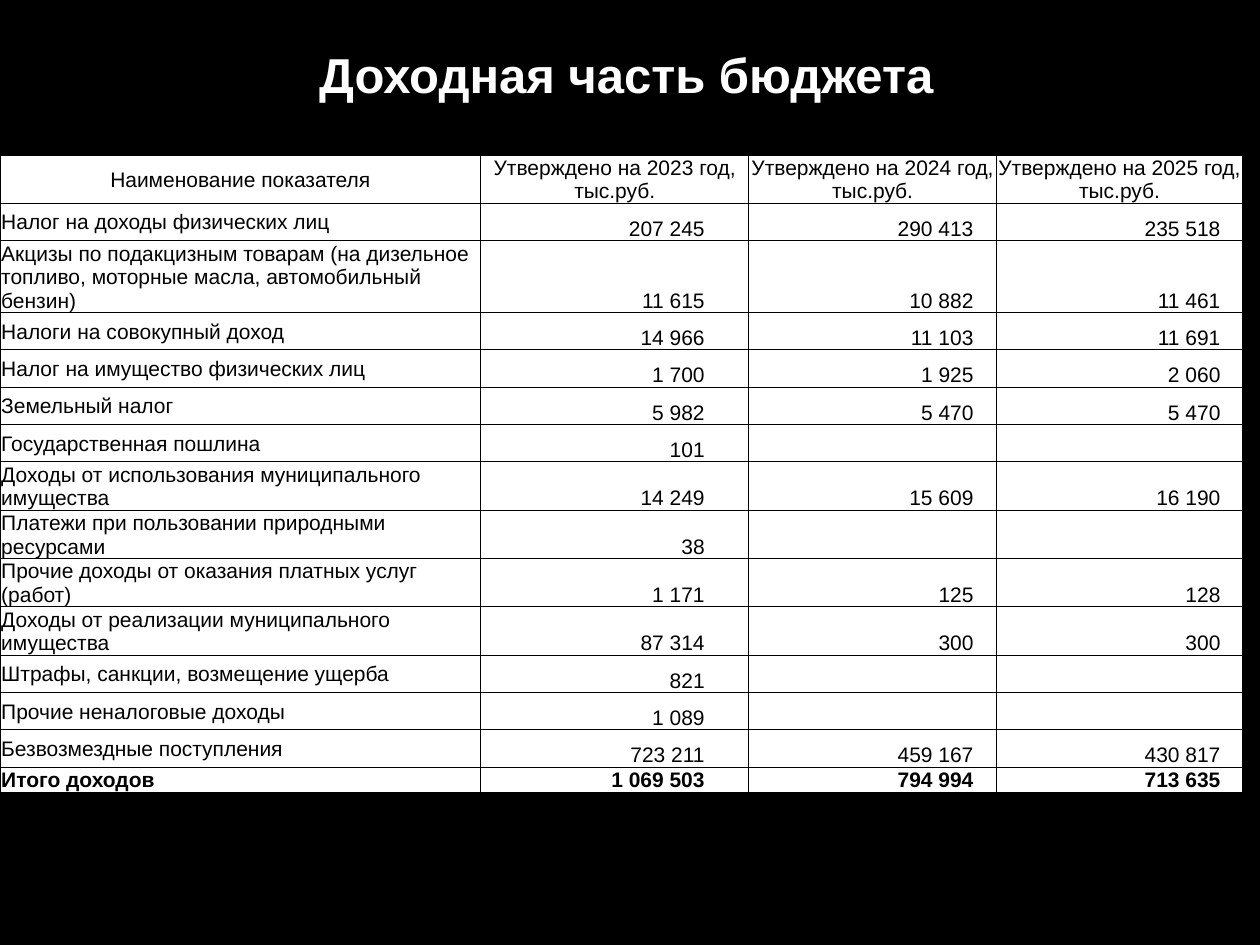
from dataclasses import dataclass

from lxml import etree
from pptx import Presentation
from pptx.dml.color import RGBColor
from pptx.enum.text import MSO_ANCHOR, PP_ALIGN
from pptx.oxml.ns import qn
from pptx.util import Pt

LEFT, CENTER, RIGHT = PP_ALIGN.LEFT, PP_ALIGN.CENTER, PP_ALIGN.RIGHT
MIDDLE, BOTTOM = MSO_ANCHOR.MIDDLE, MSO_ANCHOR.BOTTOM

EMU_PER_PX = 3048  # 300 px to the inch
TITLE_ONLY_LAYOUT = 5


@dataclass(frozen=True)
class Theme:
    font: str = "Arial"
    background: str = "000000"
    title: str = "FFFFFF"
    cell: str = "FFFFFF"
    text: str = "000000"
    border: str = "000000"
    title_size: int = 28
    table_size: int = 12
    border_width: float = 0.5


@dataclass(frozen=True)
class Column:
    header: str
    width: int
    right_inset: int


@dataclass(frozen=True)
class Income:
    name: str
    amounts: tuple[str, str, str]
    height: int = 89
    bold: bool = False


THEME = Theme()
HEADER_HEIGHT = 102
CELL_INSET = 3

COLUMNS = (
    Column("Наименование показателя", 1145, CELL_INSET),
    Column("Утверждено на 2023 год, тыс.руб.", 638, 105),
    Column("Утверждено на 2024 год, тыс.руб.", 590, 55),
    Column("Утверждено на 2025 год, тыс.руб.", 586, 53),
)

INCOMES = (
    Income("Налог на доходы физических лиц", ("207 245", "290 413", "235 518")),
    Income("Акцизы по подакцизным товарам (на дизельное топливо, моторные масла, "
           "автомобильный бензин)", ("11 615", "10 882", "11 461")),
    Income("Налоги на совокупный доход", ("14 966", "11 103", "11 691")),
    Income("Налог на имущество физических лиц", ("1 700", "1 925", "2 060")),
    Income("Земельный налог", ("5 982", "5 470", "5 470")),
    Income("Государственная пошлина", ("101", "", "")),
    Income("Доходы от использования муниципального имущества",
           ("14 249", "15 609", "16 190")),
    Income("Платежи при пользовании природными ресурсами", ("38", "", "")),
    Income("Прочие доходы от оказания платных услуг (работ)",
           ("1 171", "125", "128")),
    Income("Доходы от реализации муниципального имущества",
           ("87 314", "300", "300")),
    Income("Штрафы, санкции, возмещение ущерба", ("821", "", "")),
    Income("Прочие неналоговые доходы", ("1 089", "", "")),
    Income("Безвозмездные поступления", ("723 211", "459 167", "430 817")),
    Income("Итого доходов", ("1 069 503", "794 994", "713 635"), 51, True),
)


def px(length: int) -> int:
    return length * EMU_PER_PX


def format_font(font, size: int, color: str, bold: bool) -> None:
    font.name = THEME.font
    font.size = Pt(size)
    font.bold = bold
    font.color.rgb = RGBColor.from_string(color)


def add_borders(cell) -> None:
    properties = cell._tc.get_or_add_tcPr()
    for position, side in enumerate(("a:lnL", "a:lnR", "a:lnT", "a:lnB")):
        line = etree.Element(qn(side), w=str(Pt(THEME.border_width)))
        fill = etree.SubElement(line, qn("a:solidFill"))
        etree.SubElement(fill, qn("a:srgbClr"), val=THEME.border)
        properties.insert(position, line)


def fill_cell(cell, text: str, alignment: PP_ALIGN, anchor: MSO_ANCHOR,
              right_inset: int = CELL_INSET, bold: bool = False) -> None:
    cell.fill.solid()
    cell.fill.fore_color.rgb = RGBColor.from_string(THEME.cell)
    cell.margin_left = cell.margin_top = px(CELL_INSET)
    cell.margin_right = px(right_inset)
    cell.margin_bottom = 0
    cell.vertical_anchor = anchor
    cell.text_frame.text = text
    paragraph = cell.text_frame.paragraphs[0]
    paragraph.alignment = alignment
    format_font(paragraph.font, THEME.table_size, THEME.text, bold)
    for run in paragraph.runs:
        format_font(run.font, THEME.table_size, THEME.text, bold)
    add_borders(cell)


def add_title(slide, text: str) -> None:
    title = slide.shapes.title
    title.left, title.top, title.width, title.height = map(px, (141, 69, 2700, 216))
    title.text_frame.text = text
    title.text_frame.vertical_anchor = MIDDLE
    paragraph = title.text_frame.paragraphs[0]
    paragraph.alignment = CENTER
    format_font(paragraph.runs[0].font, THEME.title_size, THEME.title, True)


def add_income_table(slide) -> None:
    heights = [HEADER_HEIGHT] + [income.height for income in INCOMES]
    width = sum(column.width for column in COLUMNS)
    table = slide.shapes.add_table(len(heights), len(COLUMNS), 0, px(369),
                                   px(width), px(sum(heights))).table
    table.first_row = table.horz_banding = False
    for row, height in zip(table.rows, heights):
        row.height = px(height)
    for index, column in enumerate(COLUMNS):
        table.columns[index].width = px(column.width)
        fill_cell(table.cell(0, index), column.header, CENTER, MIDDLE)
    for row_index, income in enumerate(INCOMES, start=1):
        fill_cell(table.cell(row_index, 0), income.name, LEFT, MIDDLE,
                  bold=income.bold)
        for index, amount in enumerate(income.amounts, start=1):
            fill_cell(table.cell(row_index, index), amount, RIGHT, BOTTOM,
                      COLUMNS[index].right_inset, income.bold)


def main() -> None:
    presentation = Presentation()
    presentation.slide_width, presentation.slide_height = px(3000), px(2250)
    layout = presentation.slide_layouts[TITLE_ONLY_LAYOUT]
    slide = presentation.slides.add_slide(layout)
    slide.background.fill.solid()
    slide.background.fill.fore_color.rgb = RGBColor.from_string(THEME.background)
    add_title(slide, "Доходная часть бюджета")
    add_income_table(slide)
    presentation.save("out.pptx")


if __name__ == "__main__":
    main()
